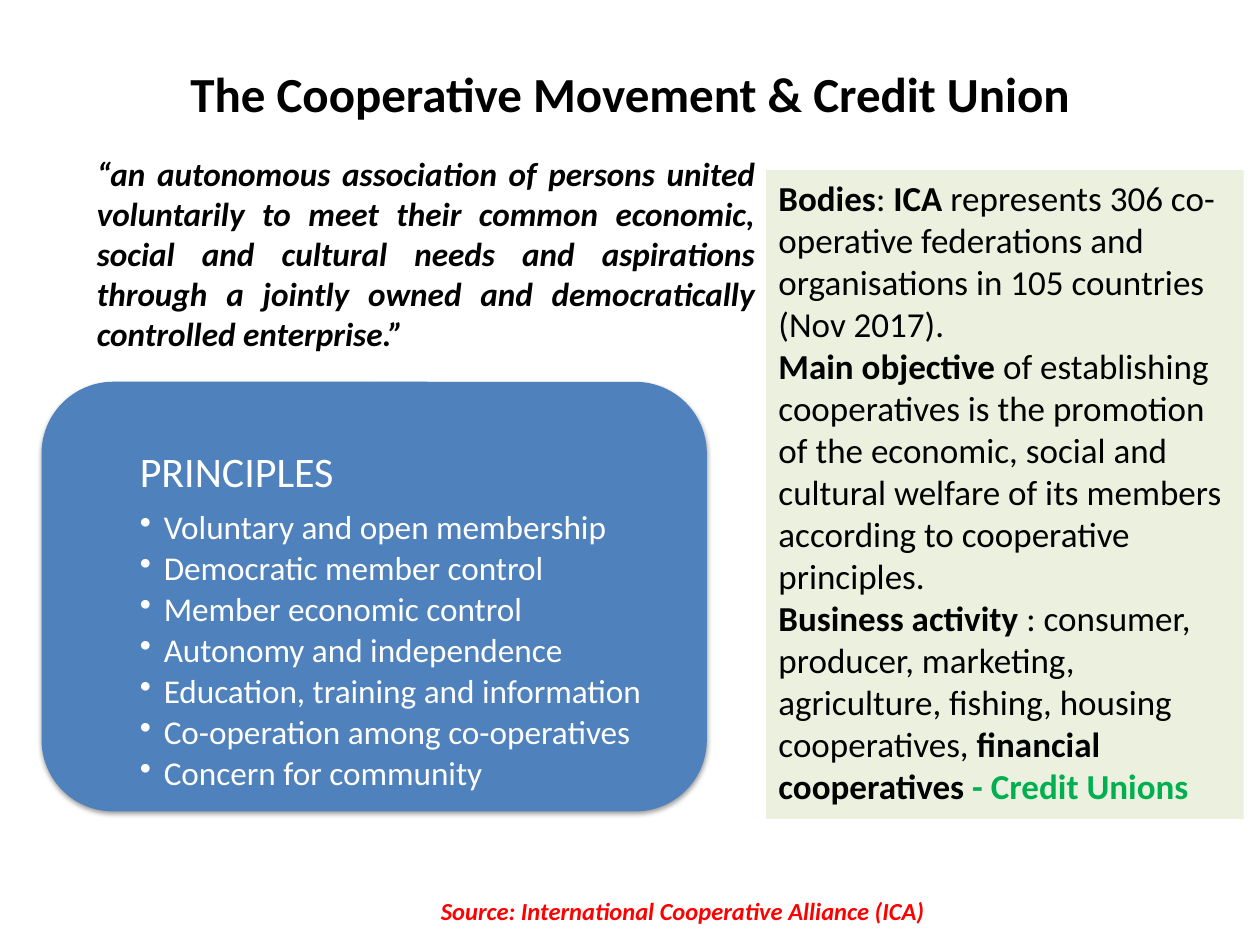
"""Build the slide on the cooperative movement and credit unions."""
from dataclasses import dataclass

from lxml.etree import SubElement
from pptx import Presentation
from pptx.dml.color import RGBColor
from pptx.enum.shapes import MSO_SHAPE
from pptx.enum.text import MSO_ANCHOR, PP_ALIGN
from pptx.oxml.ns import qn
from pptx.shapes.autoshape import Shape
from pptx.slide import Slide
from pptx.text.text import TextFrame, _Paragraph
from pptx.util import Emu, Inches, Pt

COLORS = {
    "ink": "000000",
    "source": "FF0000",
    "card": "4F81BD",
    "panel": "EBF1DE",
    "light": "FFFFFF",
    "accent": "00B050",
}
SLIDE_WIDTH, SLIDE_HEIGHT = Inches(10), Inches(7.5)
COLUMNS, ROWS = 100, 75
LINE_SPACING = 0.9


@dataclass(frozen=True)
class Area:
    column: float
    row: float
    columns: float
    rows: float

    def box(self) -> tuple[Emu, Emu, Emu, Emu]:
        cell_width, cell_height = SLIDE_WIDTH / COLUMNS, SLIDE_HEIGHT / ROWS
        return (
            Emu(round(self.column * cell_width)),
            Emu(round(self.row * cell_height)),
            Emu(round(self.columns * cell_width)),
            Emu(round(self.rows * cell_height)),
        )


@dataclass(frozen=True)
class Span:
    text: str
    size: float
    color: str = "ink"
    bold: bool = False
    italic: bool = False


@dataclass(frozen=True)
class Caption:
    area: Area
    span: Span
    align: PP_ALIGN = PP_ALIGN.LEFT
    anchor: MSO_ANCHOR = MSO_ANCHOR.TOP
    wrap: bool = True


CAPTIONS = [
    Caption(
        Area(7.5, 3.6, 85, 7.6),
        Span("The Cooperative Movement & Credit Union", 28, bold=True),
        PP_ALIGN.CENTER,
        MSO_ANCHOR.MIDDLE,
    ),
    Caption(
        Area(34, 70.6, 41.2, 3.4),
        Span("Source: International Cooperative Alliance (ICA)", 14, "source", True, True),
        wrap=False,
    ),
    Caption(
        Area(6.7, 11.7, 54.2, 17),
        Span(
            "“an autonomous association of persons united voluntarily to meet their "
            "common economic, social and cultural needs and aspirations through a "
            "jointly owned and democratically controlled enterprise.”",
            19, bold=True, italic=True,
        ),
        PP_ALIGN.JUSTIFY,
    ),
]
PRINCIPLES = [
    "Voluntary and open membership",
    "Democratic member control",
    "Member economic control",
    "Autonomy and independence",
    "Education, training and information",
    "Co-operation among co-operatives",
    "Concern for community",
]
FACTS = [
    [
        Span("Bodies", 20, bold=True),
        Span(": ", 20),
        Span("ICA", 20, bold=True),
        Span(" represents 306 co-operative federations and organisations "
             "in 105 countries (Nov 2017).", 20),
    ],
    [
        Span("Main objective ", 20, bold=True),
        Span("of establishing cooperatives is the promotion of the economic, social "
             "and cultural welfare of its members according to cooperative principles.", 20),
    ],
    [
        Span("Business activity ", 20, bold=True),
        Span(": consumer, producer, marketing, agriculture, fishing, housing "
             "cooperatives, ", 20),
        Span("financial cooperatives ", 20, bold=True),
        Span("- Credit Unions", 20, "accent", True),
    ],
]


def add_span(paragraph: _Paragraph, span: Span) -> None:
    run = paragraph.add_run()
    run.text = span.text
    run.font.name = "Calibri"
    run.font.size = Pt(span.size)
    run.font.bold = span.bold
    run.font.italic = span.italic
    run.font.color.rgb = RGBColor.from_string(COLORS[span.color])


def add_paragraph(frame: TextFrame, spans: list[Span], align: PP_ALIGN) -> _Paragraph:
    first = frame.paragraphs[0]
    paragraph = frame.add_paragraph() if first.runs else first
    paragraph.alignment = align
    for span in spans:
        add_span(paragraph, span)
    return paragraph


def add_text_area(slide: Slide, area: Area) -> TextFrame:
    frame = slide.shapes.add_textbox(*area.box()).text_frame
    frame.word_wrap = True
    return frame


def add_caption(slide: Slide, caption: Caption) -> None:
    frame = add_text_area(slide, caption.area)
    frame.word_wrap = caption.wrap
    frame.vertical_anchor = caption.anchor
    add_paragraph(frame, [caption.span], caption.align)


def add_block(slide: Slide, kind: MSO_SHAPE, area: Area, color: str) -> Shape:
    block = slide.shapes.add_shape(kind, *area.box())
    block.shadow.inherit = False
    block.fill.solid()
    block.fill.fore_color.rgb = RGBColor.from_string(COLORS[color])
    block.line.fill.background()
    return block


def add_drop_shadow(block: Shape) -> None:
    effects = block._element.spPr.find(qn("a:effectLst"))
    shadow = SubElement(effects, qn("a:outerShdw"), blurRad=str(Pt(3.1)),
                        dist=str(Pt(1.6)), dir="5400000", rotWithShape="0")
    tint = SubElement(shadow, qn("a:srgbClr"), val=COLORS["ink"])
    SubElement(tint, qn("a:alpha"), val="38000")


def add_bullet(paragraph: _Paragraph) -> None:
    properties = paragraph._p.get_or_add_pPr()
    properties.set("marL", str(Inches(0.19)))
    properties.set("indent", str(-Inches(0.19)))
    SubElement(properties, qn("a:buChar"), char="•")


def add_principles(slide: Slide) -> None:
    card = add_block(slide, MSO_SHAPE.ROUNDED_RECTANGLE, Area(3.3, 30.3, 52.8, 34.1), "card")
    add_drop_shadow(card)
    frame = add_text_area(slide, Area(10.3, 35, 50.3, 30.9))
    frame.margin_left = frame.margin_right = Inches(0.08)
    frame.margin_top = frame.margin_bottom = Inches(0.08)
    heading = add_paragraph(frame, [Span("PRINCIPLES", 24, "light")], PP_ALIGN.LEFT)
    heading.line_spacing, heading.space_after = LINE_SPACING, Pt(8.4)
    for principle in PRINCIPLES:
        item = add_paragraph(frame, [Span(principle, 19, "light")], PP_ALIGN.LEFT)
        item.line_spacing, item.space_after = LINE_SPACING, Pt(2.85)
        add_bullet(item)


def add_facts(slide: Slide) -> None:
    panel = add_block(slide, MSO_SHAPE.RECTANGLE, Area(60.8, 13.5, 37.9, 51.5), "panel")
    frame = panel.text_frame
    frame.word_wrap = True
    frame.vertical_anchor = MSO_ANCHOR.TOP
    for fact in FACTS:
        add_paragraph(frame, fact, PP_ALIGN.LEFT)


def main() -> None:
    deck = Presentation()
    deck.slide_width, deck.slide_height = SLIDE_WIDTH, SLIDE_HEIGHT
    slide = deck.slides.add_slide(deck.slide_layouts[6])
    add_principles(slide)
    add_facts(slide)
    for caption in CAPTIONS:
        add_caption(slide, caption)
    deck.save("out.pptx")


if __name__ == "__main__":
    main()
